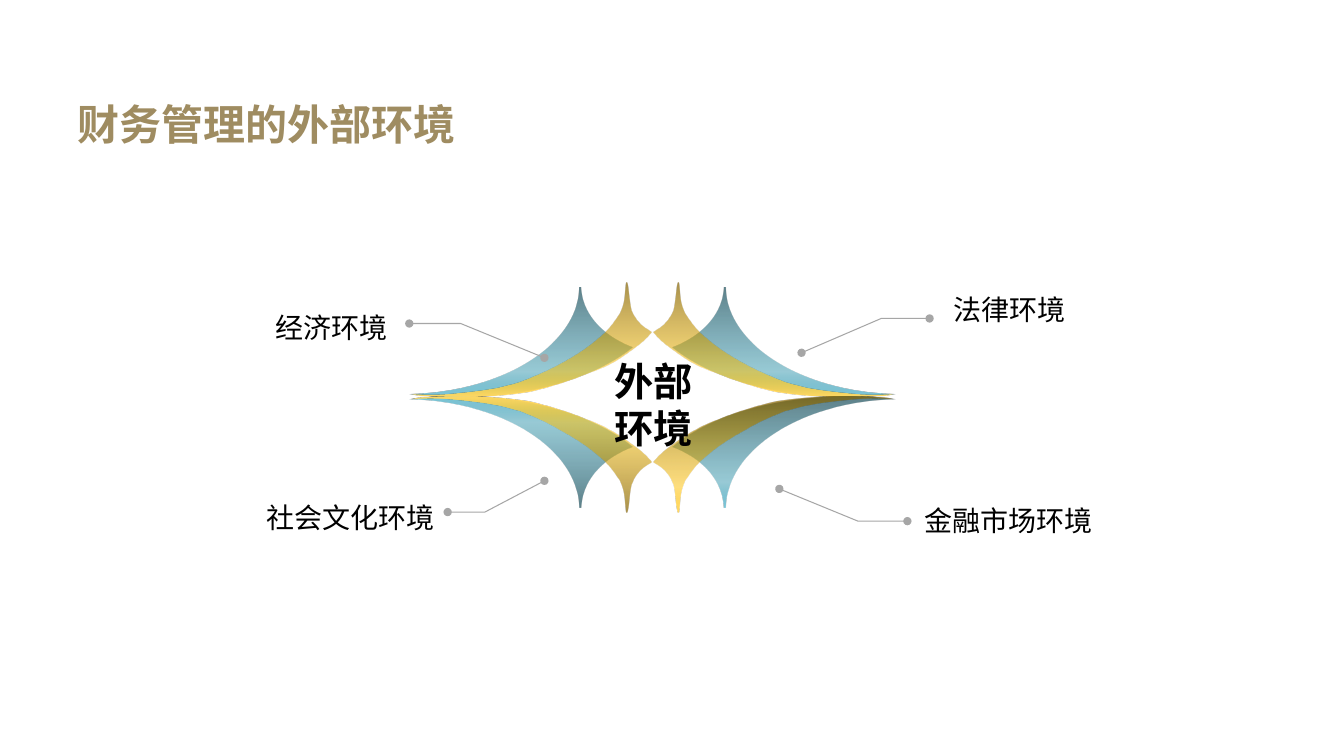
from dataclasses import dataclass

from lxml import etree
from pptx import Presentation
from pptx.dml.color import RGBColor
from pptx.enum.text import MSO_ANCHOR, MSO_AUTO_SIZE, PP_ALIGN
from pptx.oxml import parse_xml
from pptx.oxml.ns import qn
from pptx.shapes.autoshape import Shape
from pptx.slide import Slide
from pptx.util import Pt

PX = 9144  # EMU in one px, 100 px to the inch
SLIDE_WIDTH, SLIDE_HEIGHT = 1333, 750
TITLE_ONLY = 5
ANCHOR_MIDDLE = MSO_ANCHOR.MIDDLE
ALIGN_LEFT = PP_ALIGN.LEFT
FIT_SHAPE = MSO_AUTO_SIZE.SHAPE_TO_FIT_TEXT
DRAWING_NS = "http://schemas.openxmlformats.org/drawingml/2006/main"

TITLE_FONT = "Arial"
LABEL_FONT = "Noto Sans CJK SC"
GOLD = RGBColor(0x9F, 0x8C, 0x61)
BLACK = RGBColor(0x00, 0x00, 0x00)
GREY = RGBColor(0xA6, 0xA6, 0xA6)
TEAL_DARK = RGBColor(0x1A, 0x4B, 0x57)
TEAL = RGBColor(0x34, 0x97, 0xAE)
TEAL_LIGHT = RGBColor(0x7C, 0xC6, 0xD8)
AMBER_DARK = RGBColor(0x80, 0x60, 0x00)
AMBER = RGBColor(0xFF, 0xC0, 0x00)
AMBER_LIGHT = RGBColor(0xFF, 0xD9, 0x66)

GRADIENT_STOPS = ((0, 70), (77, 50), (100, 100))  # position and opacity in percent
STAR_CENTRE = (647, 393)
LOWER_STRETCH = 1.018

Point = tuple[int, int]


@dataclass(frozen=True)
class Petal:
    """A closed outline of Bezier curves, as distances outward from the star's centre."""
    colors: tuple[RGBColor, RGBColor, RGBColor]
    start: Point
    curves: tuple[Point, ...]


@dataclass(frozen=True)
class Quadrant:
    x_sign: int
    y_sign: int
    angle: int


@dataclass(frozen=True)
class Label:
    text: str
    left: int
    top: int
    width: int
    height: int = 44
    size: int = 20
    bold: bool = False
    wrap: bool = False


@dataclass(frozen=True)
class Callout:
    label: Label
    leader: tuple[Point, Point, Point]


PETALS = (
    Petal((TEAL_DARK, TEAL, TEAL_LIGHT), (71, 108), (
        (70, 82), (50, 60), (20, 49),
        (57, 19), (121, 0), (194, 0),
        (210, 0), (226, 1), (241, 3),
        (149, 5), (74, 51), (73, 108),
    )),
    Petal((AMBER_DARK, AMBER, AMBER_LIGHT), (26, 113), (
        (28, 113), (26, 94), (33, 82),
        (41, 70), (45, 65), (55, 57),
        (64, 49), (78, 40), (91, 33),
        (104, 26), (118, 20), (131, 15),
        (145, 11), (156, 8), (174, 6),
        (192, 4), (208, 1), (239, 3),
        (234, 2), (233, 1), (222, 1),
        (212, 0), (189, 0), (176, 0),
        (164, 1), (157, 1), (147, 2),
        (136, 3), (126, 4), (114, 7),
        (102, 10), (86, 15), (75, 19),
        (63, 24), (53, 27), (43, 32),
        (33, 37), (24, 44), (17, 49),
        (10, 54), (5, 59), (1, 64),
        (4, 66), (11, 70), (13, 73),
        (16, 76), (18, 79), (21, 85),
        (23, 92), (24, 114), (26, 113),
    )),
)
QUADRANTS = (
    Quadrant(-1, -1, 90),
    Quadrant(-1, 1, 270),
    Quadrant(1, -1, 90),
    Quadrant(1, 1, 90),
)
CALLOUTS = (
    Callout(Label("经济环境", 263, 303, 143, wrap=True), ((540, 355), (457, 321), (406, 321))),
    Callout(Label("法律环境", 936, 285, 132), ((795, 350), (874, 316), (922, 316))),
    Callout(Label("社会文化环境", 254, 492, 189), ((540, 477), (481, 508), (444, 508))),
    Callout(Label("金融市场环境", 907, 495, 188), ((773, 485), (851, 517), (900, 517))),
)
CENTRE_LABEL = Label("外部环境", 600, 350, 100, 104, size=28, bold=True, wrap=True)


def add_outline(slide: Slide, start: Point, points: list[Point], close: bool) -> Shape:
    builder = slide.shapes.build_freeform(*start, scale=PX)
    builder.add_line_segments(points, close=close)
    shape = builder.convert_to_shape()
    shape.shadow.inherit = False
    return shape


def curve_segments(shape: Shape) -> None:
    """Turn each three line segments of the outline into one cubic Bezier."""
    segments = list(shape.element.iter(qn("a:lnTo")))
    for first in range(0, len(segments), 3):
        curve = etree.Element(qn("a:cubicBezTo"))
        segments[first].addprevious(curve)
        for segment in segments[first:first + 3]:
            curve.append(segment[0])
            segment.getparent().remove(segment)


def set_gradient(shape: Shape, colors: tuple[RGBColor, ...], angle: int) -> None:
    stops = "".join(
        f'<a:gs pos="{position * 1000}"><a:srgbClr val="{color}">'
        f'<a:alpha val="{opacity * 1000}"/></a:srgbClr></a:gs>'
        for (position, opacity), color in zip(GRADIENT_STOPS, colors)
    )
    gradient = parse_xml(
        f'<a:gradFill xmlns:a="{DRAWING_NS}" rotWithShape="1"><a:gsLst>{stops}</a:gsLst>'
        f'<a:lin ang="{angle * 60000}" scaled="0"/></a:gradFill>'
    )
    shape.element.spPr.find(qn("a:custGeom")).addnext(gradient)


def add_petal(slide: Slide, petal: Petal, quadrant: Quadrant) -> None:
    stretch = LOWER_STRETCH if quadrant.y_sign > 0 else 1
    start, *points = [
        (STAR_CENTRE[0] + quadrant.x_sign * x,
         STAR_CENTRE[1] + quadrant.y_sign * round(y * stretch))
        for x, y in (petal.start, *petal.curves)
    ]
    shape = add_outline(slide, start, points, close=True)
    curve_segments(shape)
    set_gradient(shape, petal.colors, quadrant.angle)
    shape.line.fill.background()


def add_leader(slide: Slide, leader: tuple[Point, ...]) -> None:
    shape = add_outline(slide, leader[0], list(leader[1:]), close=False)
    shape.fill.background()
    shape.line.color.rgb = GREY
    shape.line.width = Pt(0.75)
    line = shape.element.spPr.find(qn("a:ln"))
    for end in ("a:headEnd", "a:tailEnd"):
        etree.SubElement(line, qn(end), type="oval")


def add_label(slide: Slide, label: Label) -> None:
    box = slide.shapes.add_textbox(
        label.left * PX, label.top * PX, label.width * PX, label.height * PX)
    frame = box.text_frame
    frame.word_wrap = label.wrap
    frame.auto_size = FIT_SHAPE
    frame.text = label.text
    run = frame.paragraphs[0].runs[0]
    run.font.name = LABEL_FONT
    run.font.size = Pt(label.size)
    run.font.bold = label.bold
    run.font.color.rgb = BLACK
    run.font._element.find(qn("a:latin")).addnext(
        etree.Element(qn("a:ea"), typeface=LABEL_FONT))


def set_title(slide: Slide, text: str) -> None:
    title = slide.shapes.title
    title.left, title.top, title.width, title.height = 67 * PX, 84 * PX, 1200 * PX, 77 * PX
    title.text_frame.text = text
    title.text_frame.vertical_anchor = ANCHOR_MIDDLE
    paragraph = title.text_frame.paragraphs[0]
    paragraph.alignment = ALIGN_LEFT
    paragraph.space_after = Pt(10)
    font = paragraph.runs[0].font
    font.name = TITLE_FONT
    font.size = Pt(30)
    font.bold = True
    font.color.rgb = GOLD


def main() -> None:
    presentation = Presentation()
    presentation.slide_width = SLIDE_WIDTH * PX
    presentation.slide_height = SLIDE_HEIGHT * PX
    slide = presentation.slides.add_slide(presentation.slide_layouts[TITLE_ONLY])
    set_title(slide, "财务管理的外部环境")
    for quadrant in QUADRANTS:
        for petal in PETALS:
            add_petal(slide, petal, quadrant)
    for callout in CALLOUTS:
        add_leader(slide, callout.leader)
        add_label(slide, callout.label)
    add_label(slide, CENTRE_LABEL)
    presentation.save("out.pptx")


if __name__ == "__main__":
    main()
